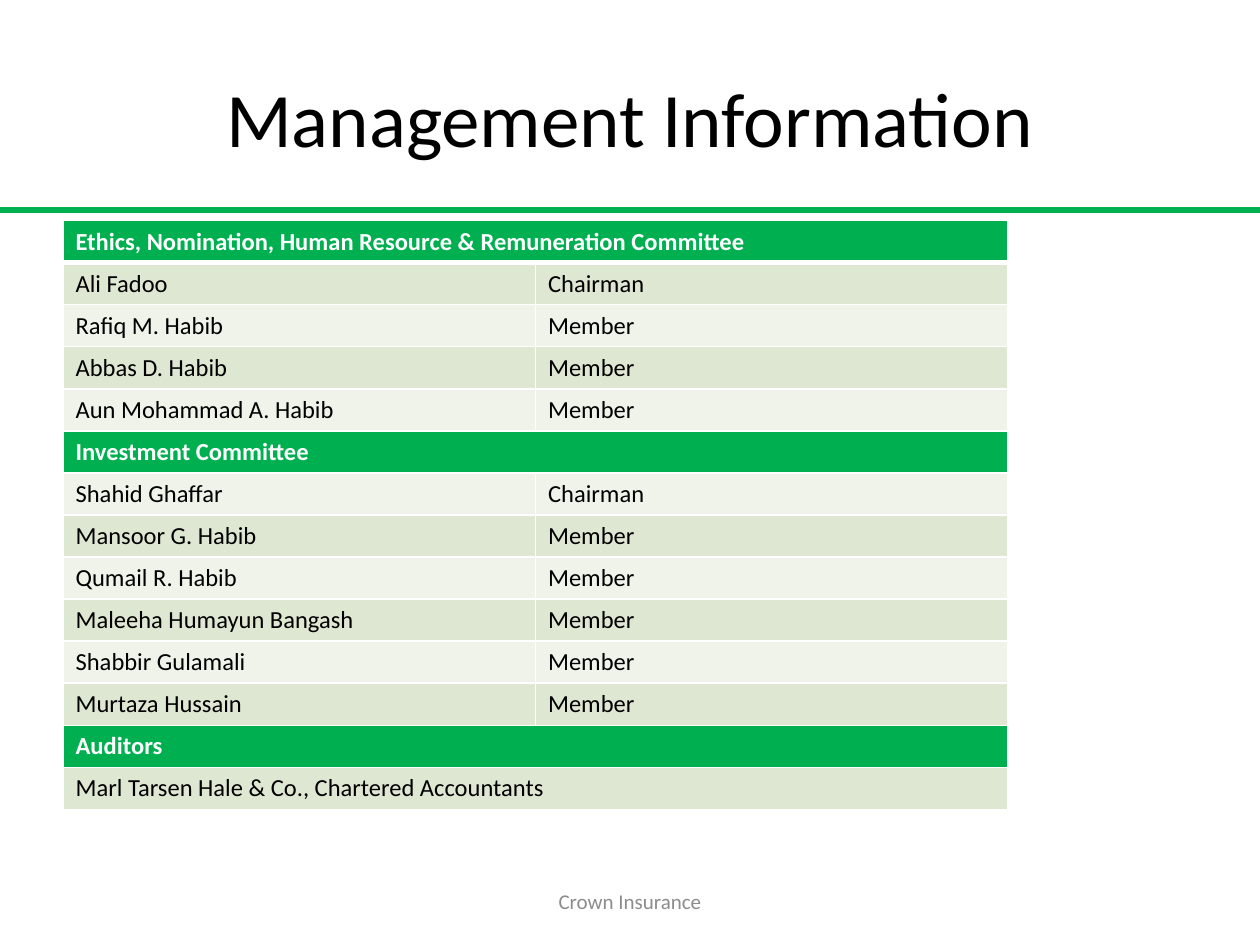
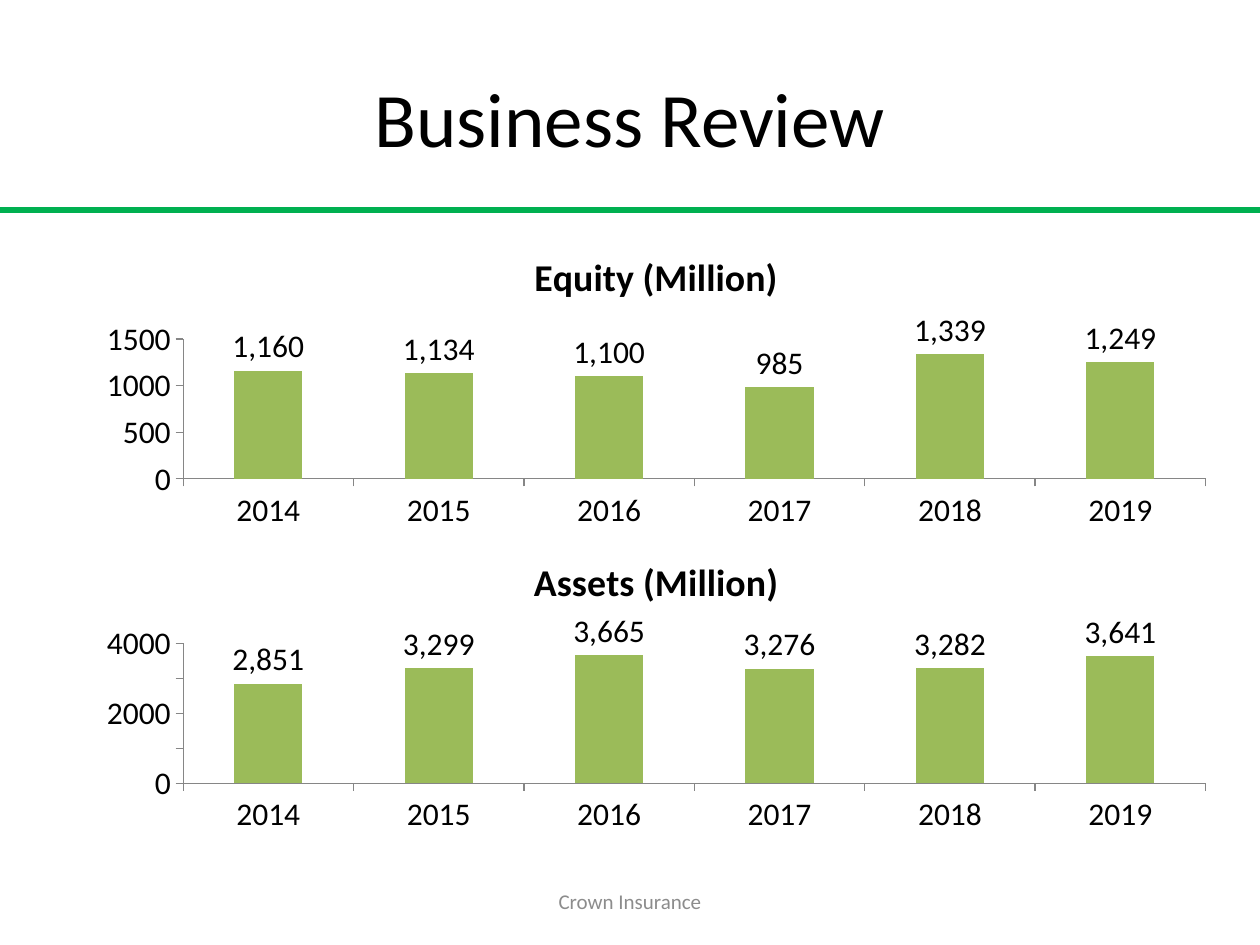
from dataclasses import dataclass

from lxml import etree
from pptx import Presentation
from pptx import util as u
from pptx.chart import data as chart_data
from pptx.dml.color import RGBColor
from pptx.enum import chart as charts
from pptx.enum import shapes, text
from pptx.oxml import ns


@dataclass(frozen=True)
class Theme:
    font: str = "Calibri"
    green: str = "00B050"
    bar: str = "9BBB59"
    band_dark: str = "DEE7D1"
    band_light: str = "EFF3EA"
    ink: str = "000000"
    white: str = "FFFFFF"
    grey: str = "8C8C8C"
    axis: str = "868686"
    title_size: float = 44
    footer_size: float = 12
    table_size: float = 14
    chart_size: float = 18
    chart_title_size: float = 21.6


def apply(target, values):
    for name, value in values.items():
        setattr(target, name, value)


class Builder:
    """Holds the style and the current page."""

    def __init__(self, theme):
        self.theme = theme
        self.deck = Presentation()
        apply(self.deck, {"slide_width": u.Pt(720), "slide_height": u.Pt(540)})
        self.page = None

    def style(self, font, size, color, bold=False):
        apply(font, {"name": self.theme.font, "size": u.Pt(size), "bold": bold})
        font.color.rgb = RGBColor.from_string(color)

    def new_page(self, title):
        self.page = self.deck.slides.add_slide(self.deck.slide_layouts[6])
        self.rule(120)
        self.label(title, (36, 21.6, 648, 90), self.theme.title_size, self.theme.ink)
        self.label("Crown Insurance", (246, 500.4, 228, 28.8),
                   self.theme.footer_size, self.theme.grey)

    def rule(self, top):
        line = self.page.shapes.add_connector(
            shapes.MSO_CONNECTOR.STRAIGHT, 0, u.Pt(top), u.Pt(720), u.Pt(top))
        line.line.width = u.Pt(3)
        line.line.color.rgb = RGBColor.from_string(self.theme.green)
        etree.SubElement(line._element.spPr, ns.qn("a:effectLst"))

    def label(self, words, place, size, color):
        box = self.page.shapes.add_textbox(*map(u.Pt, place))
        apply(box.text_frame, {"word_wrap": True,
                               "vertical_anchor": text.MSO_ANCHOR.MIDDLE})
        para = box.text_frame.paragraphs[0]
        para.alignment = text.PP_ALIGN.CENTER
        span = para.add_run()
        span.text = words
        self.style(span.font, size, color)

    def borders(self, cell, bottom):
        properties = cell._tc.get_or_add_tcPr()
        for side, width in {"L": 1, "R": 1, "T": 1, "B": bottom}.items():
            line = etree.SubElement(properties, ns.qn(f"a:ln{side}"), w=str(u.Pt(width)))
            fill = etree.SubElement(line, ns.qn("a:solidFill"))
            etree.SubElement(fill, ns.qn("a:srgbClr"), val=self.theme.white)

    def table(self, rows, place, row_height):
        """A row is (heading or wide text,) or (name, role); headings are Heading."""
        theme = self.theme
        left, top, width = place
        table = self.page.shapes.add_table(
            len(rows), 2, u.Pt(left), u.Pt(top), u.Pt(width),
            u.Pt(row_height * len(rows))).table
        table.horz_banding = False
        for number, (heading, values) in enumerate(rows):
            band = theme.band_dark if number % 2 else theme.band_light
            for column in range(2):
                cell = table.cell(number, column)
                self.borders(cell, 1 if number else 3)
                cell.fill.solid()
                cell.fill.fore_color.rgb = RGBColor.from_string(
                    theme.green if heading else band)
                if column < len(values):
                    span = cell.text_frame.paragraphs[0].add_run()
                    span.text = values[column]
                    self.style(span.font, theme.table_size,
                               theme.white if heading else theme.ink, heading)
            if len(values) == 1:
                table.cell(number, 0).merge(table.cell(number, 1))

    def columns(self, title, years, values, place, top_value, step):
        theme = self.theme
        data = chart_data.CategoryChartData()
        data.categories = years
        data.add_series(title, values)
        chart = self.page.shapes.add_chart(
            charts.XL_CHART_TYPE.COLUMN_CLUSTERED, *map(u.Pt, place), data).chart
        self.style(chart.font, theme.chart_size, theme.ink)
        apply(chart, {"has_legend": False, "has_title": True})
        chart.chart_title.include_in_layout = False
        span = chart.chart_title.text_frame.paragraphs[0].add_run()
        span.text = title
        self.style(span.font, theme.chart_title_size, theme.ink, True)

        # Axes
        apply(chart.value_axis, {"minimum_scale": 0, "maximum_scale": top_value,
                                 "major_unit": step})
        for axis in (chart.category_axis, chart.value_axis):
            apply(axis, {"has_major_gridlines": False,
                         "major_tick_mark": charts.XL_TICK_MARK.OUTSIDE})
            axis.format.line.width = u.Pt(0.75)
            axis.format.line.color.rgb = RGBColor.from_string(theme.axis)
        apply(chart.value_axis.tick_labels, {"number_format": "General",
                                             "number_format_is_linked": False})

        # Bars and their values
        plot = chart.plots[0]
        apply(plot, {"gap_width": 150, "vary_by_categories": False,
                     "has_data_labels": True})
        apply(plot.data_labels, {
            "show_value": True, "number_format": "#,##0",
            "number_format_is_linked": False,
            "position": charts.XL_LABEL_POSITION.OUTSIDE_END})
        self.style(plot.data_labels.font, theme.chart_size, theme.ink)
        fill = plot.series[0].format.fill
        fill.solid()
        fill.fore_color.rgb = RGBColor.from_string(theme.bar)


COMMITTEES = {
    "Ethics, Nomination, Human Resource & Remuneration Committee": [
        "Ali Fadoo", "Rafiq M. Habib", "Abbas D. Habib", "Aun Mohammad A. Habib"],
    "Investment Committee": [
        "Shahid Ghaffar", "Mansoor G. Habib", "Qumail R. Habib",
        "Maleeha Humayun Bangash", "Shabbir Gulamali", "Murtaza Hussain"],
}
YEARS = ["2014", "2015", "2016", "2017", "2018", "2019"]
REVIEW = [
    ("Equity (Million)", [1160, 1134, 1100, 985, 1339, 1249], 1500, 500),
    ("Assets (Million)", [2851, 3299, 3665, 3276, 3282, 3641], 4000, 1000),
]


def main():
    builder = Builder(Theme())

    # Committees and auditors
    builder.new_page("Management Information")
    rows = []
    for committee, people in COMMITTEES.items():
        rows.append((True, [committee]))
        for place, person in enumerate(people):
            rows.append((False, [person, "Member" if place else "Chairman"]))
    rows += [(True, ["Auditors"]),
             (False, ["Marl Tarsen Hale & Co., Chartered Accountants"])]
    builder.table(rows, (36, 126, 540), 24)

    # Equity above assets
    builder.new_page("Business Review")
    height = 174
    for number, (title, values, top_value, step) in enumerate(REVIEW):
        builder.columns(title, YEARS, values,
                        (48, 132 + number * height, 654, height), top_value, step)

    builder.deck.save("out.pptx")


if __name__ == "__main__":
    main()
